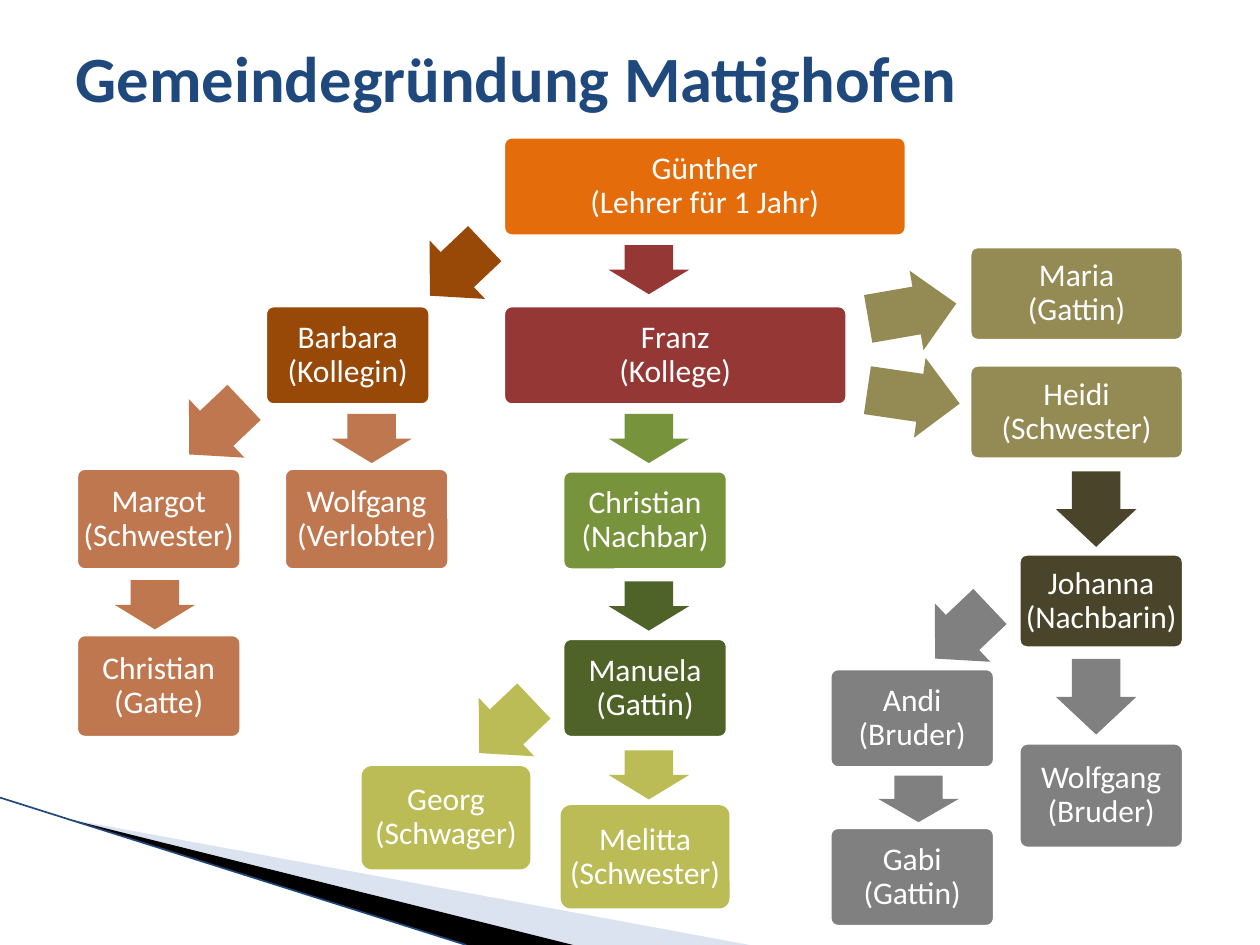
from lxml import etree
from pptx import Presentation
from pptx.dml.color import RGBColor
from pptx.enum.shapes import MSO_CONNECTOR, MSO_SHAPE
from pptx.enum.text import MSO_ANCHOR, PP_ALIGN
from pptx.oxml.ns import qn
from pptx.util import Inches, Pt

ROUNDED = MSO_SHAPE.ROUNDED_RECTANGLE
LEFT_ARROW = MSO_SHAPE.LEFT_ARROW
STRAIGHT = MSO_CONNECTOR.STRAIGHT
MIDDLE = MSO_ANCHOR.MIDDLE
LEFT, CENTER = PP_ALIGN.LEFT, PP_ALIGN.CENTER

FONT = "Calibri"
TITLE_ONLY = 5
CARD_WIDTH, CARD_HEIGHT = 1.34, 0.82
ARROW_WIDTH = 0.64
DOWN, DOWN_LEFT = 270, 316.5
SHORT, LONG = 0.39, 0.6

COLOURS = {
    "white": "FFFFFF", "black": "000000", "navy": "1F497D", "mist": "A7B9DB",
    "orange": "E46C0A", "brown": "984807", "copper": "BF7750", "red": "953735",
    "green": "77933C", "forest": "4F6228", "lime": "BCBC56", "khaki": "948A54",
    "umber": "4A452A", "grey": "808080",
}

BARBARA_CARDS = [
    ("Barbara", "(Kollegin)", "brown", 1.5, 0, CARD_WIDTH, CARD_HEIGHT),
    ("Margot", "(Schwester)", "copper", 0, 1.29, CARD_WIDTH, 0.84),
    ("Wolfgang", "(Verlobter)", "copper", 1.65, 1.29, CARD_WIDTH, 0.84),
    ("Christian", "(Gatte)", "copper", 0, 2.61, CARD_WIDTH, 0.85),
]
BARBARA_ARROWS = [
    ("brown", 3.04, -0.27, LONG, DOWN_LEFT),
    ("copper", 1.13, 0.99, LONG, DOWN_LEFT),
    ("copper", 2.36, 1.07, SHORT, DOWN),
    ("copper", 0.64, 2.39, SHORT, DOWN),
]
FRANZ_CARDS = [
    ("Günther", "(Lehrer für 1 Jahr)", "orange", 1.11, 0, 3.23, CARD_HEIGHT),
    ("Franz", "(Kollege)", "red", 1.11, 1.34, 2.76, CARD_HEIGHT),
    ("Christian", "(Nachbar)", "green", 1.58, 2.65, CARD_WIDTH, CARD_HEIGHT),
    ("Manuela", "(Gattin)", "forest", 1.58, 3.98, CARD_WIDTH, CARD_HEIGHT),
    ("Georg", "(Schwager)", "lime", 0, 5.01, CARD_WIDTH, CARD_HEIGHT),
    ("Melitta", "(Schwester)", "lime", 1.58, 5.32, CARD_WIDTH, CARD_HEIGHT),
]
FRANZ_ARROWS = [
    ("red", 2.28, 1.07, SHORT, DOWN),
    ("green", 2.28, 2.41, SHORT, DOWN),
    ("forest", 2.28, 3.74, SHORT, DOWN),
    ("lime", 2.28, 5.08, SHORT, DOWN),
    ("lime", 1.15, 4.7, LONG, DOWN_LEFT),
]
FAMILY_CARDS = [
    ("Maria", "(Gattin)", "khaki", 1.11, 0, 1.73, 0.78),
    ("Heidi", "(Schwester)", "khaki", 1.11, 0.94, 1.73, 0.78),
    ("Johanna", "(Nachbarin)", "umber", 1.5, 2.44, CARD_WIDTH, 0.78),
    ("Wolfgang", "(Bruder)", "grey", 1.5, 3.94, CARD_WIDTH, 0.87),
    ("Andi", "(Bruder)", "grey", 0, 3.35, CARD_WIDTH, CARD_HEIGHT),
    ("Gabi", "(Gattin)", "grey", 0, 4.61, CARD_WIDTH, CARD_HEIGHT),
]
FAMILY_ARROWS = [
    ("khaki", 0.67, 0.53, 0.71, 170.1),
    ("khaki", 0.68, 1.21, 0.74, 188.3),
    ("umber", 2.13, 2.1, LONG, DOWN),
    ("grey", 2.13, 3.59, LONG, DOWN),
    ("grey", 1.07, 3.08, LONG, DOWN_LEFT),
    ("grey", 0.72, 4.4, 0.37, DOWN),
]


def colour(name):
    """Return the named colour."""
    return RGBColor.from_string(COLOURS[name])


def paint(shape, name):
    """Give a shape a plain fill with no outline and no shadow."""
    shape.shadow.inherit = False
    shape.fill.solid()
    shape.fill.fore_color.rgb = colour(name)
    shape.line.fill.background()


def style_run(run, size, name, bold=False):
    """Set the font of one run."""
    run.font.name = FONT
    run.font.size = Pt(size)
    run.font.bold = bold
    run.font.color.rgb = colour(name)


def add_title(slide, left, top, width, height):
    """Place and format the title."""
    title = slide.shapes.title
    title.left, title.top = Inches(left), Inches(top)
    title.width, title.height = Inches(width), Inches(height)
    frame = title.text_frame
    frame.word_wrap = True
    frame.vertical_anchor = MIDDLE
    paragraph = frame.paragraphs[0]
    paragraph.alignment = LEFT
    run = paragraph.add_run()
    run.text = "Gemeindegründung Mattighofen"
    style_run(run, 36.9, "navy", bold=True)


def add_wedge(slide, points, name):
    """Draw one filled wedge through the points."""
    corners = [(Inches(x), Inches(y)) for x, y in points]
    builder = slide.shapes.build_freeform(*corners[0])
    builder.add_line_segments(corners[1:], close=True)
    wedge = builder.convert_to_shape()
    paint(wedge, name)
    return wedge


def add_corner(slide, left, top, bottom):
    """Draw the wedges and the line in the lower left corner."""
    tip = (left + 0.54, top + 0.17)
    pale = add_wedge(slide, [tip, (left + 5.95, bottom), (left + 4.56, bottom)], "mist")
    tint = pale.fill._xPr.find(qn("a:solidFill"))[0]
    etree.SubElement(tint, qn("a:alpha"), val="40000")
    add_wedge(slide, [tip, (left + 4.55, bottom), (left + 3.7, bottom)], "black")
    line = slide.shapes.add_connector(
        STRAIGHT, Inches(left), Inches(top), Inches(left + 3.7), Inches(bottom))
    line.line.color.rgb = colour("navy")
    line.line.width = Pt(0.95)
    etree.SubElement(line._element.spPr, qn("a:effectLst"))


def add_card(slide, name, relation, fill, left, top, width, height):
    """Draw one person's card."""
    card = slide.shapes.add_shape(
        ROUNDED, Inches(left), Inches(top), Inches(width), Inches(height))
    card.adjustments[0] = 0.1
    paint(card, fill)
    if fill != "lime":
        card.line.color.rgb = colour("white")
        card.line.width = Pt(4.33)
    frame = card.text_frame
    frame.word_wrap = True
    frame.vertical_anchor = MIDDLE
    frame.margin_left = frame.margin_right = Inches(0.04)
    frame.margin_top = frame.margin_bottom = Inches(0.04)
    paragraph = frame.paragraphs[0]
    paragraph.alignment = CENTER
    paragraph.line_spacing = 0.9
    for index, text in enumerate((name, relation)):
        if index:
            paragraph.add_line_break()
        run = paragraph.add_run()
        run.text = text
        style_run(run, 18, "white")


def add_arrow(slide, fill, center_x, center_y, length, rotation):
    """Draw a block arrow turned about its centre."""
    arrow = slide.shapes.add_shape(
        LEFT_ARROW, Inches(center_x - length / 2), Inches(center_y - ARROW_WIDTH / 2),
        Inches(length), Inches(ARROW_WIDTH))
    arrow.adjustments[0] = 0.6
    arrow.adjustments[1] = 0.5
    arrow.rotation = rotation
    paint(arrow, fill)


def add_branch(slide, left, top, cards, arrows):
    """Draw one branch of the tree from its upper left corner."""
    for name, relation, fill, x, y, width, height in cards:
        add_card(slide, name, relation, fill, left + x, top + y, width, height)
    for fill, x, y, length, rotation in arrows:
        add_arrow(slide, fill, left + x, top + y, length, rotation)


def main():
    """Build the slide and save it."""
    presentation = Presentation()
    presentation.slide_width, presentation.slide_height = Inches(10), Inches(7.5)
    slide = presentation.slides.add_slide(presentation.slide_layouts[TITLE_ONLY])
    add_corner(slide, 0, 6.33, 7.5)
    add_title(slide, 0.5, 0.3, 9.5, 0.61)
    add_branch(slide, 0.59, 2.41, BARBARA_CARDS, BARBARA_ARROWS)
    add_branch(slide, 2.87, 1.07, FRANZ_CARDS, FRANZ_ARROWS)
    add_branch(slide, 6.57, 1.94, FAMILY_CARDS, FAMILY_ARROWS)
    presentation.save("out.pptx")


if __name__ == "__main__":
    main()
